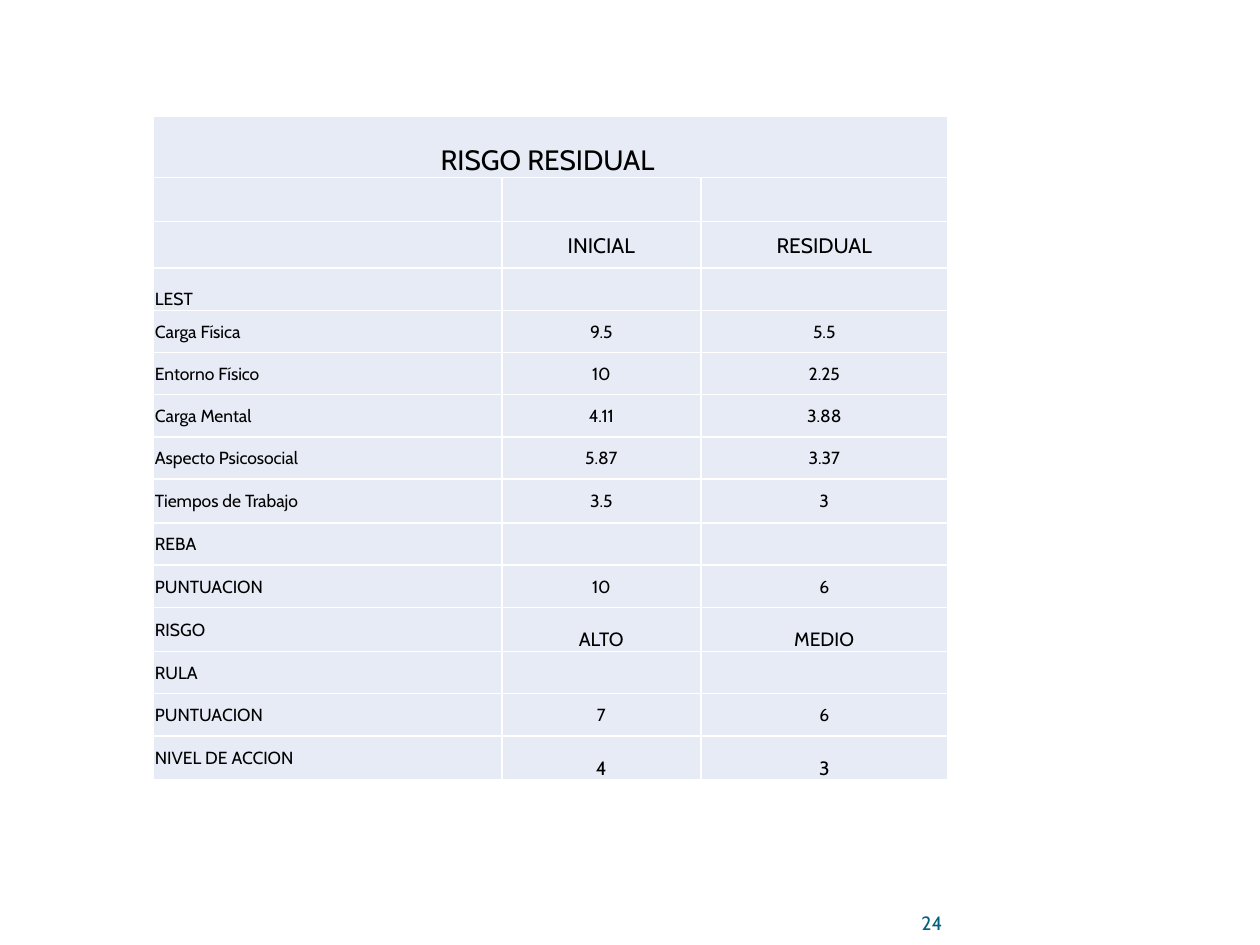
import pptx
import pptx.util
import pptx.dml.color
import pptx.enum.text
from lxml import etree
from pptx.oxml.ns import qn

Pt = pptx.util.Pt
ALIGN = pptx.enum.text.PP_ALIGN
ANCHOR = pptx.enum.text.MSO_ANCHOR

FONT = "Cabin"
BLACK, WHITE, CELL_BLUE, NUMBER_BLUE = "000000", "FFFFFF", "E7EBF5", "04617B"

TABLE_LEFT, TABLE_TOP = 87.84, 66.24
COLUMN_WIDTHS = [198.9, 113.8, 141]
SHORT_ROW, TALL_ROW = 24.1, 25.2

TITLE = {"size": 16, "anchor": ANCHOR.BOTTOM}
HEADING = {"size": 12, "anchor": ANCHOR.MIDDLE}
BODY = {"size": 10, "anchor": ANCHOR.MIDDLE}
SECTION = {"size": 10, "anchor": ANCHOR.BOTTOM}
RESULT = {"size": 11, "anchor": ANCHOR.BOTTOM}

# Row height, style of the label, style of the values, texts
ROWS = [
    (35.2, TITLE, TITLE, ["RISGO RESIDUAL ", "", ""]),
    (TALL_ROW, BODY, BODY, ["", "", ""]),
    (26.6, HEADING, HEADING, ["", "INICIAL", "RESIDUAL"]),
    (SHORT_ROW, SECTION, BODY, ["LEST", "", ""]),
    (SHORT_ROW, BODY, BODY, ["Carga Física", "9.5", "5.5"]),
    (SHORT_ROW, BODY, BODY, ["Entorno Físico", "10", "2.25"]),
    (SHORT_ROW, BODY, BODY, ["Carga Mental", "4.11", "3.88"]),
    (SHORT_ROW, BODY, BODY, ["Aspecto Psicosocial", "5.87", "3.37"]),
    (TALL_ROW, BODY, BODY, ["Tiempos de Trabajo", "3.5", "3"]),
    (SHORT_ROW, BODY, BODY, ["REBA", "", ""]),
    (SHORT_ROW, BODY, BODY, ["PUNTUACION", "10", "6"]),
    (TALL_ROW, BODY, RESULT, ["RISGO", "ALTO", "MEDIO"]),
    (SHORT_ROW, BODY, BODY, ["RULA", "", ""]),
    (SHORT_ROW, BODY, BODY, ["PUNTUACION", "7", "6"]),
    (TALL_ROW, BODY, RESULT, ["NIVEL DE ACCION", "4", "3"]),
]


def set_attributes(target, values):
    for name, value in values.items():
        setattr(target, name, value)


def rgb(hex_color):
    return pptx.dml.color.RGBColor.from_string(hex_color)


def write(paragraph, text, size, color, alignment):
    paragraph.alignment = alignment
    if text:
        run = paragraph.add_run()
        run.text = text
        set_attributes(run.font, {"name": FONT, "size": Pt(size)})
        run.font.color.rgb = rgb(color)


def add_borders(cell, color, width):
    """Draw all four cell borders; must run before the cell is filled."""
    properties = cell._tc.get_or_add_tcPr()
    for side in ("lnL", "lnR", "lnT", "lnB"):
        line = etree.SubElement(properties, qn("a:" + side), w=str(Pt(width)))
        fill = etree.SubElement(line, qn("a:solidFill"))
        etree.SubElement(fill, qn("a:srgbClr"), val=color)


def format_cell(cell, text, style, alignment):
    set_attributes(cell, {
        "margin_left": Pt(0.72), "margin_right": Pt(0.72),
        "margin_top": Pt(0.72), "margin_bottom": Pt(0),
        "vertical_anchor": style["anchor"],
    })
    add_borders(cell, WHITE, 1)
    cell.fill.solid()
    cell.fill.fore_color.rgb = rgb(CELL_BLUE)
    write(cell.text_frame.paragraphs[0], text, style["size"], BLACK, alignment)


def add_risk_table(slide):
    heights = [row[0] for row in ROWS]
    table = slide.shapes.add_table(
        len(ROWS), len(COLUMN_WIDTHS), Pt(TABLE_LEFT), Pt(TABLE_TOP),
        Pt(sum(COLUMN_WIDTHS)), Pt(sum(heights))).table
    set_attributes(table, {"first_row": False, "horz_banding": False})
    for column, width in zip(table.columns, COLUMN_WIDTHS):
        column.width = Pt(width)
    for row, (height, label_style, value_style, texts) in zip(table.rows, ROWS):
        row.height = Pt(height)
        for index, (cell, text) in enumerate(zip(row.cells, texts)):
            is_label = index == 0 and label_style is not TITLE
            format_cell(cell, text, value_style if index else label_style,
                        ALIGN.LEFT if is_label else ALIGN.CENTER)
    table.cell(0, 0).merge(table.cell(0, len(COLUMN_WIDTHS) - 1))


def add_page_number(slide):
    box = slide.shapes.add_textbox(Pt(492.5), Pt(516.2), Pt(46), Pt(18))
    set_attributes(box.text_frame, {
        "margin_left": 0, "margin_right": 0, "margin_top": 0,
        "margin_bottom": 0, "word_wrap": True,
        "vertical_anchor": ANCHOR.BOTTOM,
    })
    write(box.text_frame.paragraphs[0], "24", 11, NUMBER_BLUE, ALIGN.RIGHT)


def main():
    presentation = pptx.Presentation()
    set_attributes(presentation, {"slide_width": Pt(720), "slide_height": Pt(540)})
    slide = presentation.slides.add_slide(presentation.slide_layouts[6])
    add_page_number(slide)
    add_risk_table(slide)
    presentation.save("out.pptx")


if __name__ == "__main__":
    main()
